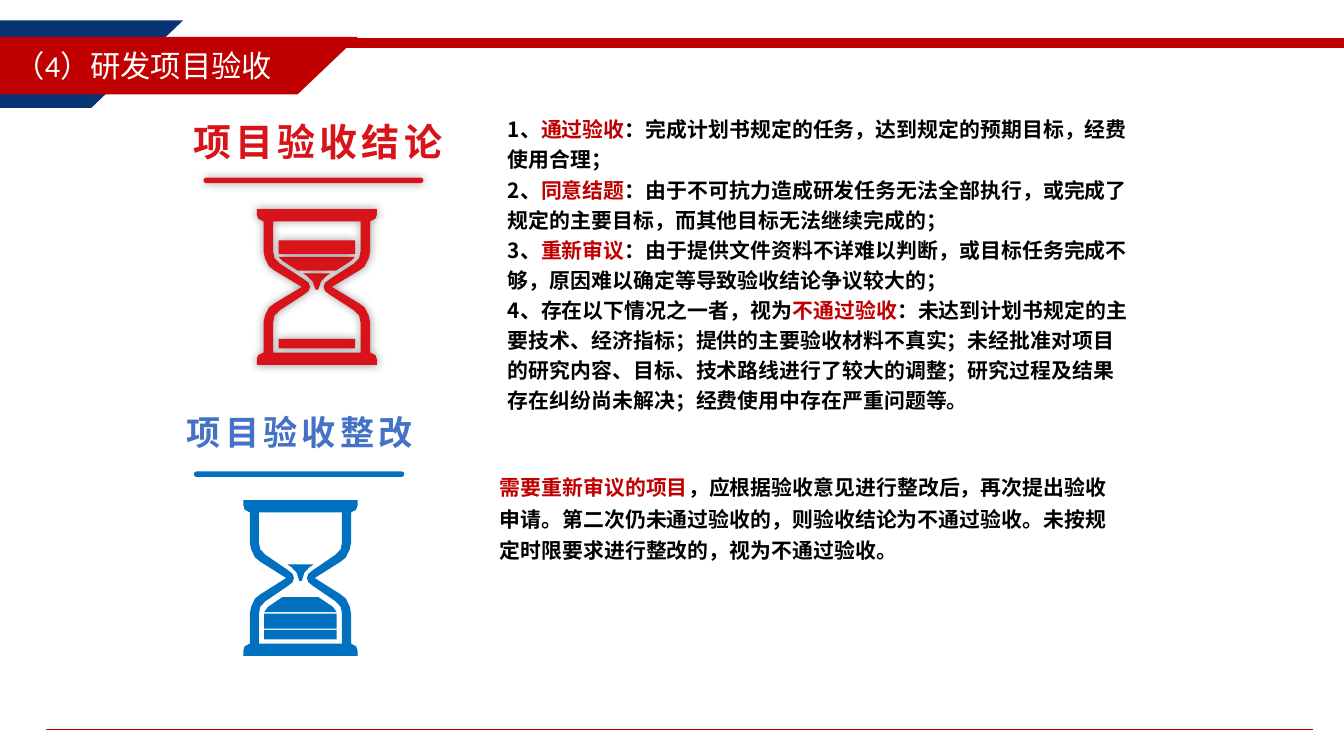
from lxml import etree
from pptx import Presentation
from pptx.dml.color import RGBColor
from pptx.enum.shapes import MSO_CONNECTOR, MSO_SHAPE
from pptx.enum.text import MSO_ANCHOR, PP_ALIGN
from pptx.oxml import parse_xml
from pptx.oxml.ns import nsdecls, qn
from pptx.util import Inches, Pt

NAVY = RGBColor(0x08, 0x34, 0x73)
CRIMSON = RGBColor(0xC0, 0x00, 0x00)
RED = RGBColor(0xD8, 0x14, 0x1A)
BLUE = RGBColor(0x00, 0x70, 0xC0)
HEADING_BLUE = RGBColor(0x44, 0x72, 0xC4)
BLACK = RGBColor(0, 0, 0)
WHITE = RGBColor(0xFF, 0xFF, 0xFF)
BODY_FONT, HEADING_FONT = "Noto Sans CJK SC", "Noto Sans CJK JP"

SHADOW = (f'<a:outerShdw {nsdecls("a")} blurRad="63500" dist="0" algn="ctr" rotWithShape="0">'
          '<a:srgbClr val="000000"><a:alpha val="40000"/></a:srgbClr></a:outerShdw>')


def paint(sp, color, glow=False):
    sp.fill.solid()
    sp.fill.fore_color.rgb = color
    sp.line.fill.background()
    sp.shadow.inherit = False
    if glow:
        sp._element.spPr.find(qn("a:effectLst")).append(parse_xml(SHADOW))


def add_run(p, text, size, color, font, bold=True):
    r = p.add_run()
    r.text = text
    r.font.size, r.font.bold, r.font.name = Pt(size), bold, font
    r.font.color.rgb = color
    if font != "Calibri":
        etree.SubElement(r.font._element, qn("a:ea")).set("typeface", font)
    return r


prs = Presentation()
prs.slide_width, prs.slide_height = Inches(9.84), Inches(5.51)
s = prs.slides.add_slide(prs.slide_layouts[5])
shapes = s.shapes

# Banner: three slanted bars
for x, y, w, h, color in [(-0.81, 0.15, 2.15, 0.64, NAVY),
                          (-0.53, 0.27, 3.15, 0.42, CRIMSON),
                          (2.13, 0.28, 8.17, 0.07, CRIMSON)]:
    sp = shapes.add_shape(MSO_SHAPE.PARALLELOGRAM, Inches(x), Inches(y), Inches(w), Inches(h))
    sp.adjustments[0] = 1.05
    paint(sp, color)

# Title, brought in front of the banner
title = shapes.title
title.left, title.top, title.width, title.height = Inches(0), Inches(0.27), Inches(2.1), Inches(0.42)
shapes.element.append(title.element)
tf = title.text_frame
tf.margin_left = tf.margin_right = tf.margin_top = tf.margin_bottom = 0
tf.vertical_anchor = MSO_ANCHOR.MIDDLE
tf.paragraphs[0].alignment = PP_ALIGN.CENTER
add_run(tf.paragraphs[0], "（4）研发项目验收", 16, WHITE, "Calibri", bold=False)

# Footer rule
rule = shapes.add_connector(MSO_CONNECTOR.STRAIGHT, Inches(0.34), Inches(5.34), Inches(9.61), Inches(5.34))
rule.line.color.rgb = CRIMSON
rule.line.width = Pt(0.5)
etree.SubElement(rule._element.spPr, qn("a:effectLst"))

# Hourglass outlines: (distance from the axis, depth below the top)
HEIGHT = 1.14
OUTER = [(0.44, 0), (0.44, 0.04), (0.43, 0.07), (0.41, 0.08), (0.39, 0.09), (0.39, 0.31),
         (0.38, 0.36), (0.35, 0.42), (0.31, 0.45), (0.11, 0.57)]
INNER = [(0.32, 0.09), (0.32, 0.31), (0.31, 0.36), (0.27, 0.4), (0.1, 0.51),
         (0.06, 0.54), (0.05, 0.57)]
FRAME = [half + [(x, HEIGHT - y) for x, y in reversed(half)] for half in (OUTER, INNER)]
NECK = [(0.1, 0.47), (0.07, 0.49), (0.03, 0.53), (0.01, 0.59)]
FUNNEL = [(0.28, 0.35), (0.25, 0.38), (0.14, 0.45)]
HEAP = [(0.14, 0.71), (0.25, 0.78), (0.28, 0.82)]

# Per hourglass: axis, top, width factor, colour, glow, bar, sand outlines, sand layers
hourglasses = [
    (2.32, 1.53, 1, RED, True, (1.49, 1.3, 1.61), [NECK, FUNNEL], [(0.23, 0.1), (0.95, 0.07)]),
    (2.2, 3.66, 0.95, BLUE, False, (1.42, 3.45, 1.54), [NECK, HEAP], [(0.83, 0.11), (0.95, 0.07)]),
]
for axis, top, factor, color, glow, (bar_x, bar_y, bar_w), sand, layers in hourglasses:
    bar = shapes.add_shape(MSO_SHAPE.ROUNDED_RECTANGLE, Inches(bar_x), Inches(bar_y),
                           Inches(bar_w), Inches(0.04))
    bar.adjustments[0] = 0.5
    paint(bar, color, glow)
    for contours in [FRAME] + [[half] for half in sand]:
        builder = None
        for half in contours:
            ring = half + [(-x, y) for x, y in reversed(half)]
            pts = [(Inches(axis + x * factor), Inches(top + y)) for x, y in ring]
            if builder is None:
                builder = shapes.build_freeform(*pts[0])
            else:
                builder.move_to(*pts[0])
            builder.add_line_segments(pts[1:], close=True)
        paint(builder.convert_to_shape(), color, glow)
    for y, h in layers:
        layer = shapes.add_shape(MSO_SHAPE.RECTANGLE, Inches(axis - 0.28 * factor), Inches(top + y),
                                 Inches(0.56 * factor), Inches(h))
        paint(layer, color, glow)

# Headings
for text, x, y, w, h, size, color in [
        ("项目验收结论", 1.17, 0.82, 2.31, 0.44, 20, RED),
        ("项目验收整改", 1.09, 2.96, 2.21, 0.4, 18, HEADING_BLUE)]:
    tf = shapes.add_textbox(Inches(x), Inches(y), Inches(w), Inches(h)).text_frame
    tf.word_wrap = True
    p = tf.paragraphs[0]
    p.alignment = PP_ALIGN.CENTER
    add_run(p, text, size, color, HEADING_FONT).font._element.set("spc", "220")

# Body texts: each paragraph is lead, highlighted term, rest
conclusions = [
    ("1、", "通过验收", "：完成计划书规定的任务，达到规定的预期目标，经费使用合理；"),
    ("2、", "同意结题", "：由于不可抗力造成研发任务无法全部执行，或完成了规定的主要目标，而其他目标无法继续完成的；"),
    ("3、", "重新审议", "：由于提供文件资料不详难以判断，或目标任务完成不够，原因难以确定等导致验收结论争议较大的；"),
    ("4、存在以下情况之一者，视为", "不通过验收",
     "：未达到计划书规定的主要技术、经济指标；提供的主要验收材料不真实；未经批准对项目的研究内容、目标、"
     "技术路线进行了较大的调整；研究过程及结果存在纠纷尚未解决；经费使用中存在严重问题等。"),
]
rectification = [
    ("", "需要重新审议的项目",
     "，应根据验收意见进行整改后，再次提出验收申请。第二次仍未通过验收的，则验收结论为不通过验收。"
     "未按规定时限要求进行整改的，视为不通过验收。"),
]
for paragraphs, x, y, w, h, spacing in [(conclusions, 3.62, 0.77, 4.74, 2.32, 1.2),
                                        (rectification, 3.56, 3.38, 4.68, 0.79, 1.25)]:
    tf = shapes.add_textbox(Inches(x), Inches(y), Inches(w), Inches(h)).text_frame
    tf.word_wrap = True
    for i, parts in enumerate(paragraphs):
        p = tf.add_paragraph() if i else tf.paragraphs[0]
        p.line_spacing = spacing
        for text, color in zip(parts, (BLACK, CRIMSON, BLACK)):
            if text:
                add_run(p, text, 11, color, BODY_FONT)

prs.save("out.pptx")
